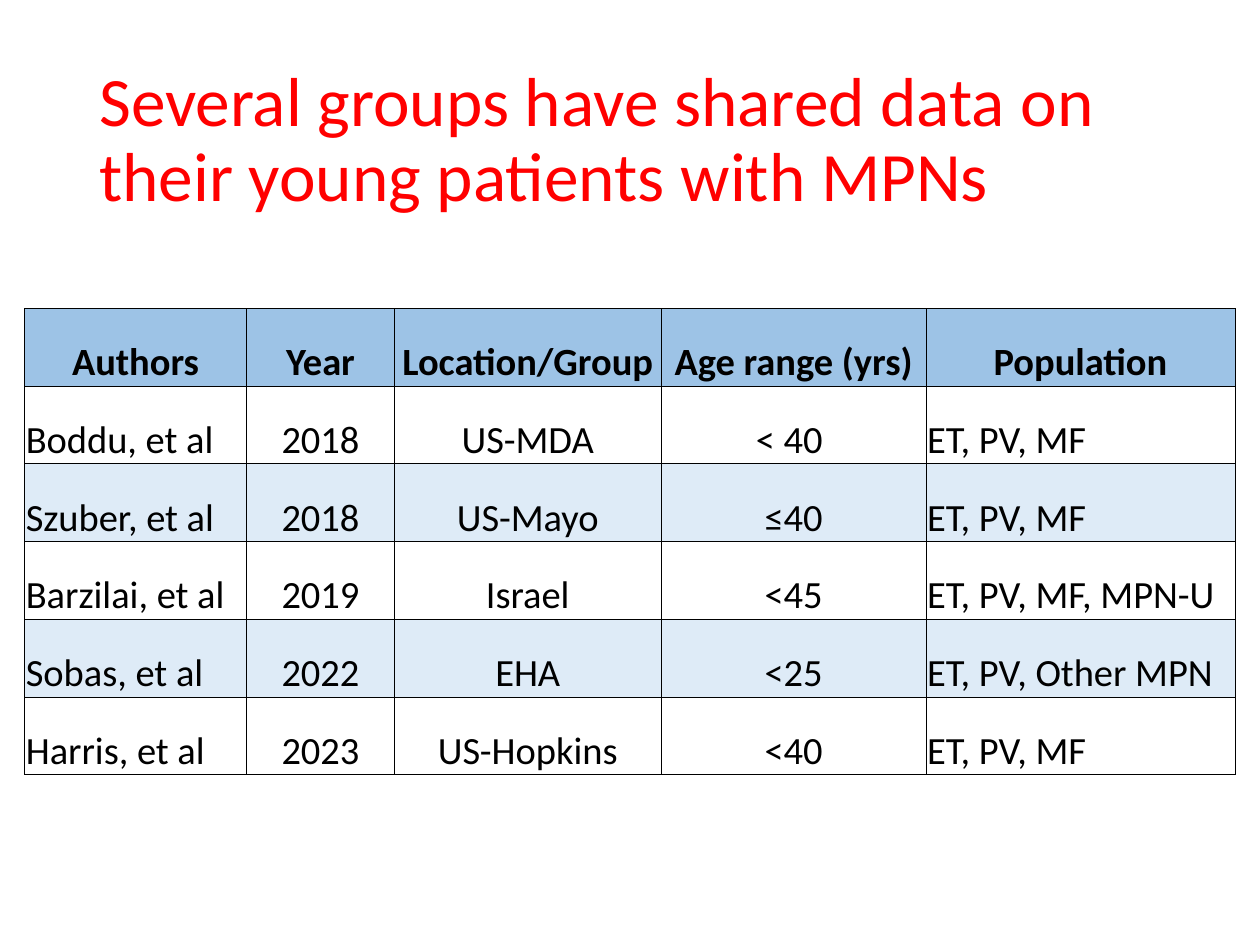
from lxml import etree
from pptx import Presentation
from pptx.dml.color import RGBColor
from pptx.enum.text import MSO_ANCHOR as Anchor, MSO_AUTO_SIZE as AutoSize, PP_ALIGN as Align
from pptx.oxml.ns import qn
from pptx.util import Pt

COLORS = {"title": "FF0000", "text": "000000", "border": "000000",
          "header": "9DC3E6", "band": "DEEBF7"}
ROWS = [
    ["Authors", "Year", "Location/Group", "Age range (yrs)", "Population"],
    ["Boddu, et al", "2018", "US-MDA", "< 40 ", "ET, PV, MF"],
    ["Szuber, et al", "2018", "US-Mayo", "≤40", "ET, PV, MF"],
    ["Barzilai, et al", "2019", "Israel", "<45", "ET, PV, MF, MPN-U"],
    ["Sobas, et al", "2022", "EHA", "<25", "ET, PV, Other MPN"],
    ["Harris, et al", "2023", "US-Hopkins", "<40", "ET, PV, MF"],
]
COLUMN_WIDTHS = [126.8, 84.5, 152.5, 151.3, 176.6]
ROW_HEIGHT = 44.4
LEFT_COLUMNS = (0, 4)


def write_text(frame, text, size, color, align, bold=False, spacing=None):
    para = frame.paragraphs[0]
    para.alignment = align
    para.line_spacing = spacing
    span = para.add_run()
    span.text = text
    span.font.name = "Calibri"
    span.font.size = Pt(size)
    span.font.bold = bold
    span.font.color.rgb = RGBColor.from_string(COLORS[color])


def add_borders(cell, width):
    properties = cell._tc.get_or_add_tcPr()
    for position, side in enumerate(("lnL", "lnR", "lnT", "lnB")):
        line = etree.Element(qn(f"a:{side}"), w=str(Pt(width)))
        fill = etree.SubElement(line, qn("a:solidFill"))
        etree.SubElement(fill, qn("a:srgbClr"), val=COLORS["border"])
        properties.insert(position, line)


deck = Presentation()
deck.slide_width, deck.slide_height = Pt(720), Pt(540)
page = deck.slides.add_slide(deck.slide_layouts[5])

title = page.shapes.title
title.left, title.top, title.width, title.height = Pt(49.5), Pt(28.75), Pt(621), Pt(104.4)
title.text_frame.auto_size = AutoSize.NONE
title.text_frame.word_wrap = True
title.text_frame.vertical_anchor = Anchor.MIDDLE
write_text(title.text_frame, "Several groups have shared data on their young patients with MPNs",
           size=39.6, color="title", align=Align.LEFT, spacing=0.9)

table = page.shapes.add_table(len(ROWS), len(COLUMN_WIDTHS), Pt(14.1), Pt(176.3),
                              Pt(sum(COLUMN_WIDTHS)), Pt(ROW_HEIGHT * len(ROWS))).table
for column, width in zip(table.columns, COLUMN_WIDTHS):
    column.width = Pt(width)

for row_index, values in enumerate(ROWS):
    table.rows[row_index].height = Pt(ROW_HEIGHT)
    is_header = row_index == 0
    for column_index, value in enumerate(values):
        cell = table.cell(row_index, column_index)
        cell.margin_left = cell.margin_right = cell.margin_top = Pt(0.7)
        cell.margin_bottom = Pt(0)
        cell.vertical_anchor = Anchor.BOTTOM
        if row_index % 2 == 0:
            cell.fill.solid()
            cell.fill.fore_color.rgb = RGBColor.from_string(COLORS["header" if is_header else "band"])
        else:
            cell.fill.background()
        is_left = column_index in LEFT_COLUMNS and not is_header
        write_text(cell.text_frame, value, size=22, color="text",
                   align=Align.LEFT if is_left else Align.CENTER, bold=is_header)
        add_borders(cell, 0.5)

deck.save("out.pptx")
